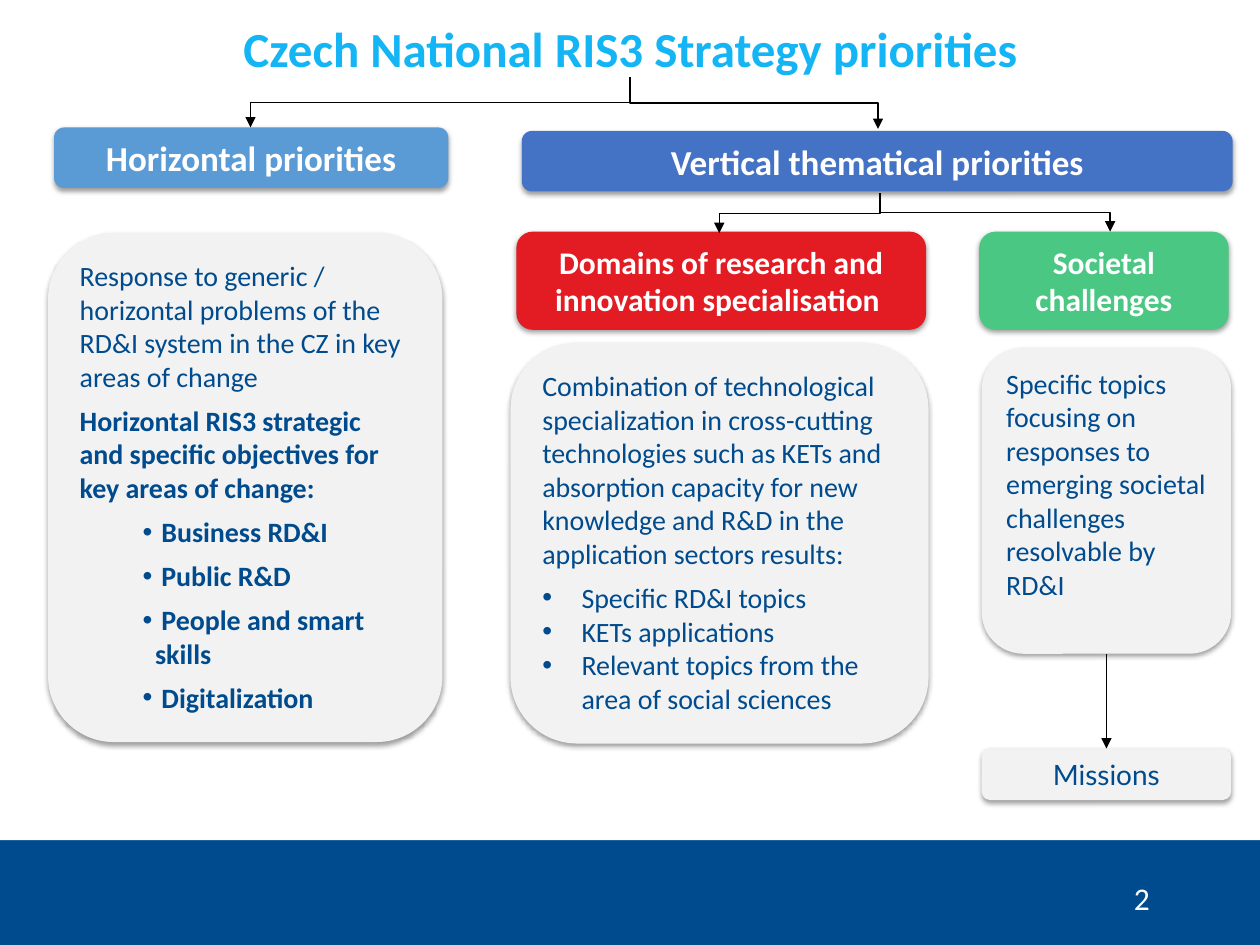
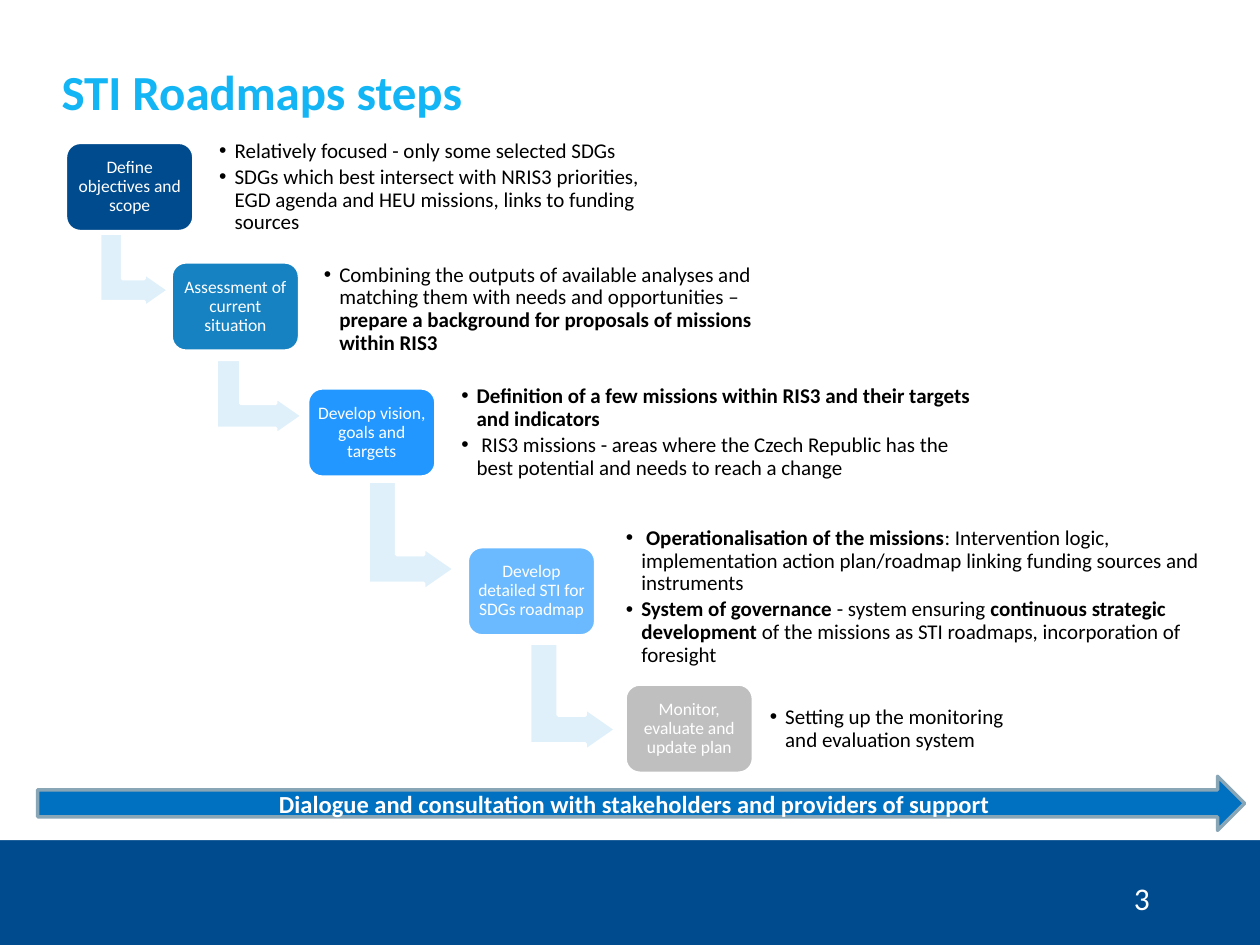
from typing import NamedTuple

from lxml.etree import SubElement
from pptx import Presentation
from pptx.dml.color import RGBColor
from pptx.enum.shapes import MSO_CONNECTOR, MSO_SHAPE
from pptx.enum.text import MSO_ANCHOR, MSO_AUTO_SIZE, PP_ALIGN
from pptx.oxml.ns import qn
from pptx.util import Cm, Pt

NAVY = RGBColor(0x00, 0x4B, 0x8D)
SKY = RGBColor(0x13, 0xB5, 0xF4)
WHITE = RGBColor(0xFF, 0xFF, 0xFF)
BLACK = RGBColor(0x00, 0x00, 0x00)
PANEL_GREY = RGBColor(0xF2, 0xF2, 0xF2)
HORIZONTAL_BLUE = RGBColor(0x5B, 0x9B, 0xD5)
VERTICAL_BLUE = RGBColor(0x44, 0x72, 0xC4)
DOMAIN_RED = RGBColor(0xE3, 0x1B, 0x23)
CHALLENGE_GREEN = RGBColor(0x4A, 0xC7, 0x83)
PALE_BLUE = RGBColor(0xE0, 0xF0, 0xFB)
DIALOGUE_BLUE = RGBColor(0x00, 0x70, 0xC0)
DIALOGUE_EDGE = RGBColor(0x89, 0xA6, 0xB7)
STEP_2 = RGBColor(0x16, 0x82, 0xC2)
STEP_3 = RGBColor(0x22, 0x97, 0xFF)
STEP_4 = RGBColor(0x6B, 0xBA, 0xFF)
STEP_5 = RGBColor(0xBF, 0xBF, 0xBF)


class Box(NamedTuple):
    """A rectangle in centimetres."""
    left: float
    top: float
    width: float
    height: float

    def inner(self, left, top, width, height):
        """Return a box placed relative to this one."""
        return Box(self.left + left, self.top + top, width, height)

    def lengths(self):
        return [Cm(value) for value in self]


STEP_WIDTH, STEP_HEIGHT = 2.59, 1.8
# label, colour, left, top, arrow (relative), note (relative), note lines
STEPS = [
    ("Define objectives and scope", NAVY, 1.32, 2.87,
     (0.64, 1.88, 1.5, 1.4), (2.97, 0.08, 9.12, 1.65),
     ["Relatively focused - only some selected SDGs",
      "SDGs which best intersect with NRIS3 priorities, EGD agenda and HEU "
      "missions, links to funding sources"]),
    ("Assessment of current situation", STEP_2, 3.45, 5.28,
     (1.02, 1.85, 1.52, 1.75), (2.95, -0.15, 9.65, 2.21),
     ["Combining the outputs of available analyses and matching them with "
      "needs and opportunities – **prepare a background for proposals of "
      "missions within RIS3"]),
    ("Develop vision, goals and targets", STEP_3, 6.2, 7.82,
     (0.99, 2.11, 2.21, 1.75), (2.97, -0.08, 10.82, 1.96),
     ["**Definition of a few missions within RIS3 and their targets and "
      "indicators",
      " RIS3 missions - areas where the Czech Republic has the best "
      "potential and needs to reach a change"]),
    ("Develop detailed STI for SDGs roadmap", STEP_4, 9.42, 11.02,
     (1.04, 2.16, 2.18, 1.75), (3.07, -0.38, 12.19, 2.79),
     ["** Operationalisation of the missions**: Intervention logic, "
      "implementation action plan/roadmap linking funding sources and "
      "instruments",
      "**System of governance **- system ensuring **continuous strategic "
      "development **of the missions as STI roadmaps, incorporation of "
      "foresight"]),
    ("Monitor, evaluate and update plan", STEP_5, 12.6, 13.79,
     None, (2.79, 0.18, 5.26, 1.45),
     ["Setting up the monitoring and evaluation system"]),
]


def write(shape, text, size=16, color=NAVY, font="Calibri", align=PP_ALIGN.LEFT,
          after=0, line=None, level=0, bullet=None):
    """Add a paragraph; ** switches bold, bullet is (margin, hang) in cm."""
    frame = shape.text_frame
    para = frame.paragraphs[0]
    if para.runs:
        para = frame.add_paragraph()
    para.alignment = align
    para.level = level
    para.space_after = Pt(after)
    if line:
        para.line_spacing = line
    if bullet:
        margin, hang = bullet
        properties = para._p.get_or_add_pPr()
        properties.set("marL", str(Cm(margin)))
        properties.set("indent", str(-Cm(hang)))
        SubElement(properties, qn("a:buFont"), typeface="Arial")
        SubElement(properties, qn("a:buChar"), char="•")
    for index, piece in enumerate(text.split("**")):
        if piece:
            span = para.add_run()
            span.text = piece
            span.font.name = font
            span.font.size = Pt(size)
            span.font.bold = index % 2 == 1
            span.font.color.rgb = color


def set_frame(shape, anchor, inset=None):
    frame = shape.text_frame
    frame.word_wrap = True
    frame.auto_size = MSO_AUTO_SIZE.NONE
    frame.vertical_anchor = anchor
    if inset is not None:
        frame.margin_left = frame.margin_right = Cm(inset)
        frame.margin_top = frame.margin_bottom = Cm(inset)


def add_figure(page, kind, box, fill, edge=None):
    shape = page.shapes.add_shape(kind, *box.lengths())
    shape.fill.solid()
    shape.fill.fore_color.rgb = fill
    if edge is None:
        shape.line.fill.background()
    else:
        shape.line.color.rgb = edge
        shape.line.width = Pt(2)
    shape.shadow.inherit = False
    return shape


def add_text_box(page, box, anchor, inset=None):
    text_box = page.shapes.add_textbox(*box.lengths())
    set_frame(text_box, anchor, inset)
    return text_box


def add_card(page, box, fill):
    """Add a rounded card with a soft shadow below it."""
    card = add_figure(page, MSO_SHAPE.ROUNDED_RECTANGLE, box, fill)
    set_frame(card, MSO_ANCHOR.TOP)
    effects = card._element.spPr.find(qn("a:effectLst"))
    shadow = SubElement(effects, qn("a:outerShdw"), blurRad=str(Pt(3.1)),
                        dist=str(Pt(1.6)), dir="5400000", rotWithShape="0")
    color = SubElement(shadow, qn("a:srgbClr"), val=str(BLACK))
    SubElement(color, qn("a:alpha"), val="38000")
    return card


def add_header(page, box, fill, text, size):
    card = add_card(page, box, fill)
    write(card, f"**{text}", size=size, color=WHITE, align=PP_ALIGN.CENTER, after=6)


def add_arrow_line(page, kind, begin, end):
    arrow = page.shapes.add_connector(kind, *(Cm(value) for value in begin + end))
    arrow.line.color.rgb = BLACK
    arrow.line.width = Pt(0.75)
    SubElement(arrow.line._get_or_add_ln(), qn("a:tailEnd"), type="triangle")
    SubElement(arrow._element.spPr, qn("a:effectLst"))
    return arrow


def add_fork(page, start, ends):
    """Lead down from one point to several, each by an elbow turned upright."""
    for end in ends:
        across, down = end[0] - start[0], end[1] - start[1]
        middle_x, middle_y = start[0] + across / 2, start[1] + down / 2
        left, right = middle_x - down / 2, middle_x + down / 2
        top, bottom = middle_y - abs(across) / 2, middle_y + abs(across) / 2
        turn = 90
        if across > 0:
            left, right, turn = right, left, 270
        elbow = add_arrow_line(page, MSO_CONNECTOR.ELBOW, (left, top), (right, bottom))
        elbow._element.spPr.find(qn("a:xfrm")).set("rot", str(turn * 60000))


def add_page(deck, title, title_box, align, number):
    page = deck.slides.add_slide(deck.slide_layouts[5])
    page.background.fill.solid()
    page.background.fill.fore_color.rgb = NAVY
    sheet = add_figure(page, MSO_SHAPE.RECTANGLE, Box(0, 0, 25.4, 16.94), WHITE)
    page.shapes._spTree.insert(2, sheet._element)

    heading = page.shapes.title
    heading.left, heading.top, heading.width, heading.height = title_box.lengths()
    set_frame(heading, MSO_ANCHOR.MIDDLE, inset=0)
    write(heading, f"**{title}", size=28, color=SKY, align=align)

    number_box = add_text_box(page, Box(22.61, 17.6, 1.27, 1.02), MSO_ANCHOR.TOP)
    write(number_box, str(number), size=18, color=WHITE)
    return page


def add_horizontal_priorities(page, box):
    add_header(page, box.inner(0.12, 0, 7.95, 1.22), HORIZONTAL_BLUE,
               "Horizontal priorities", 20)
    panel = add_card(page, box.inner(0, 2.13, 7.95, 10.26), PANEL_GREY)
    write(panel, "Response to generic / horizontal problems of the RD&I system "
          "in the CZ in key areas of change", after=6)
    write(panel, "**Horizontal RIS3 strategic and specific objectives for key "
          "areas of change:", after=6)
    for area in ("Business RD&I", "Public R&D", "People and smart skills",
                 "Digitalization"):
        write(panel, f"** {area}", after=6, level=1, bullet=(1.52, 0.25))


def add_domains(page, box):
    add_header(page, box.inner(0.12, 0, 8.26, 1.98), DOMAIN_RED,
               "Domains of research and innovation specialisation ", 18)
    panel = add_card(page, box.inner(0, 2.24, 8.43, 8.08), PANEL_GREY)
    write(panel, "Combination of technological specialization in cross-cutting "
          "technologies such as KETs and absorption capacity for new knowledge "
          "and R&D in the application sectors results:", after=6)
    for topic in ("Specific RD&I topics", "KETs applications",
                  "Relevant topics from the area of social sciences"):
        write(panel, topic, bullet=(0.79, 0.79))


def add_challenges(page, box):
    add_header(page, box.inner(0, 0, 5.03, 1.98), CHALLENGE_GREEN,
               "Societal challenges", 18)
    panel = add_card(page, box.inner(0.05, 2.34, 5.03, 6.17), PANEL_GREY)
    write(panel, "Specific topics focusing on responses to emerging societal "
          "challenges resolvable by RD&I")
    missions = add_card(page, box.inner(0.05, 10.42, 5.03, 1.04), PANEL_GREY)
    write(missions, "Missions", font="Lato", align=PP_ALIGN.CENTER)
    link = add_arrow_line(page, MSO_CONNECTOR.STRAIGHT, (0, 0), (1, 1))
    link.begin_connect(panel, 2)
    link.end_connect(missions, 0)


def add_vertical_priorities(page, box):
    add_header(page, box.inner(0.23, 0, 14.33, 1.22), VERTICAL_BLUE,
               "Vertical thematical priorities", 20)
    add_domains(page, box.inner(0, 2.03, 8.43, 10.32))
    add_challenges(page, box.inner(9.45, 2.03, 5.08, 11.46))
    add_fork(page, (box.left + 7.45, box.top + 1.26),
             [(box.left + 4.21, box.top + 2.06), (box.left + 12.09, box.top + 2.03)])


def add_step(page, box, label, color, arrow, note, lines):
    if arrow:
        bend = add_figure(page, MSO_SHAPE.BENT_UP_ARROW, box.inner(*arrow),
                          PALE_BLUE, WHITE)
        bend.rotation = 90
        for index, value in enumerate((0.33, 0.25, 0.36)):
            bend.adjustments[index] = value
    step = add_figure(page, MSO_SHAPE.ROUNDED_RECTANGLE, box, color, WHITE)
    set_frame(step, MSO_ANCHOR.MIDDLE, inset=0.1)
    write(step, label, size=10, color=WHITE, align=PP_ALIGN.CENTER, line=0.9)
    note_box = add_text_box(page, box.inner(*note), MSO_ANCHOR.MIDDLE, inset=0.13)
    for text in lines:
        write(note_box, text, size=12, color=BLACK, line=0.9, after=2, level=1,
              bullet=(0.31, 0.31))


def add_dialogue_arrow(page, box):
    arrow = add_figure(page, MSO_SHAPE.RIGHT_ARROW, box, DIALOGUE_BLUE, DIALOGUE_EDGE)
    set_frame(arrow, MSO_ANCHOR.MIDDLE)
    write(arrow, "**Dialogue and consultation with stakeholders and providers of "
          "support", size=14, color=WHITE, align=PP_ALIGN.CENTER)


def add_priorities_page(deck):
    page = add_page(deck, "Czech National RIS3 Strategy priorities",
                    Box(2.24, 0.38, 20.93, 1.19), PP_ALIGN.CENTER, 2)
    add_horizontal_priorities(page, Box(0.97, 2.57, 8.07, 12.39))
    add_vertical_priorities(page, Box(10.29, 2.64, 14.56, 13.49))
    add_fork(page, (12.7, 1.56), [(5.05, 2.57), (17.7, 2.6)])


def add_roadmap_page(deck):
    page = add_page(deck, "STI Roadmaps steps", Box(1.24, 1.24, 22.89, 1.19),
                    PP_ALIGN.LEFT, 3)
    for label, color, left, top, arrow, note, lines in STEPS:
        add_step(page, Box(left, top, STEP_WIDTH, STEP_HEIGHT), label, color,
                 arrow, note, lines)
    add_dialogue_arrow(page, Box(0.76, 15.65, 24.33, 1.09))


def main():
    deck = Presentation()
    deck.slide_width, deck.slide_height = Cm(25.4), Cm(19.05)
    add_priorities_page(deck)
    add_roadmap_page(deck)
    deck.save("out.pptx")


if __name__ == "__main__":
    main()
